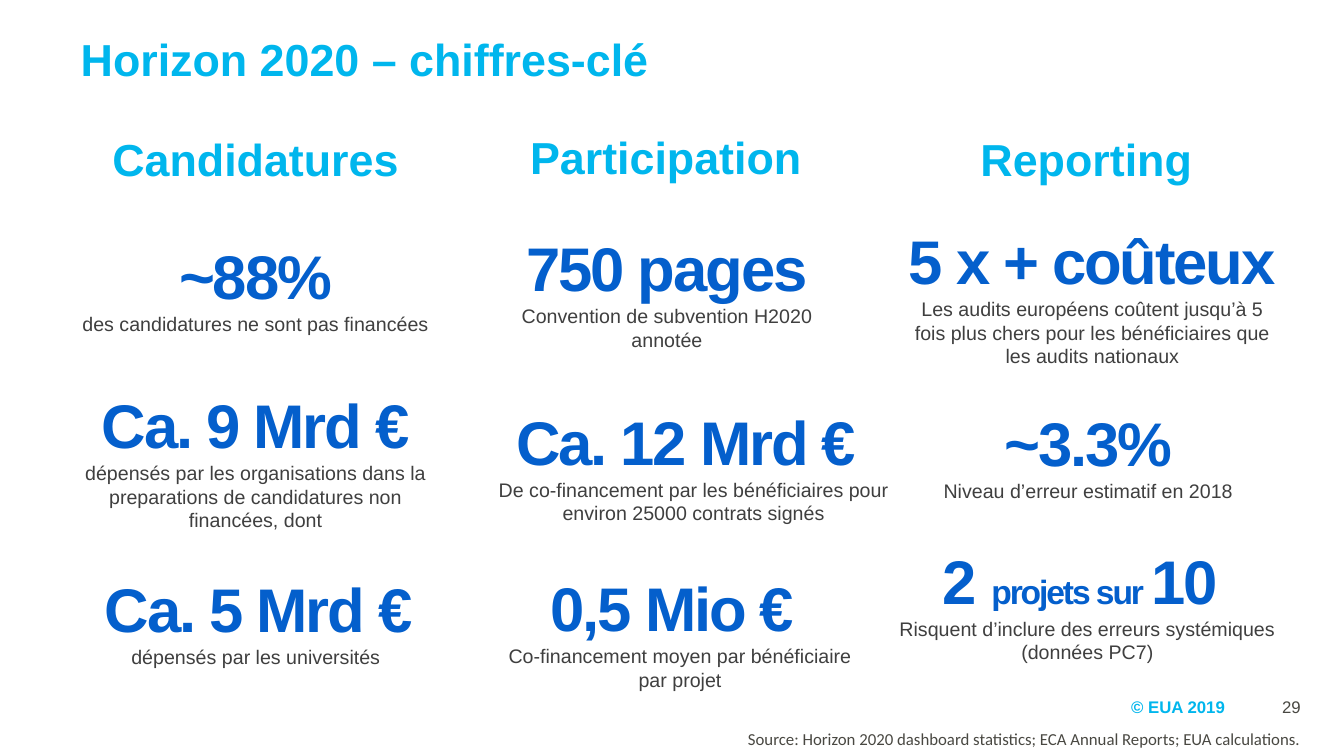
from pptx import Presentation
from pptx.dml.color import RGBColor
from pptx.enum import shapes, text
from pptx.util import Inches, Pt

CYAN = RGBColor(0x00, 0xB6, 0xED)
BLUE = RGBColor(0x04, 0x5F, 0xCC)
GREY = RGBColor(0x3F, 0x3F, 0x3F)
DARK = RGBColor(0x49, 0x48, 0x42)
WHITE = RGBColor(0xFF, 0xFF, 0xFF)

INSET = 0.04
BIG, SMALL = 44, 24

# Each heading and figure: left, top, width, height, then its wording.
# A figure's first item is a list of (text, size) spans.
HEADINGS = [
    (0.69, 1.18, 3.69, 0.78, "Candidatures"),
    (4.76, 1.16, 3.69, 0.78, "Participation"),
    (8.86, 1.18, 3.83, 0.78, "Reporting"),
]
FIGURES = [
    (0.69, 3.7, 3.69, 1.72, [("Ca. 9 Mrd €", BIG)],
     "dépensés par les organisations dans la preparations de candidatures non financées, dont"),
    (0.69, 1.98, 3.69, 1.72, [("~88%", BIG)], "des candidatures ne sont pas financées"),
    (0.72, 5.29, 3.69, 1.72, [("Ca. 5 Mrd €", BIG)], "dépensés par les universités "),
    (4.77, 2.03, 3.69, 1.71, [("750 pages", BIG)], "Convention de subvention H2020 annotée"),
    (4.84, 3.75, 4.08, 1.71, [("Ca. 12 Mrd € ", BIG)],
     "De co-financement par les bénéficiaires pour environ 25000 contrats signés"),
    (4.9, 5.4, 3.69, 1.71, [("0,5 Mio € ", BIG)], "Co-financement moyen par bénéficiaire par projet"),
    (8.92, 2.19, 3.83, 1.71, [("5 x + coûteux", BIG)],
     "Les audits européens coûtent jusqu’à 5 fois plus chers pour les bénéficiaires que les audits nationaux"),
    (8.88, 3.64, 3.83, 1.72, [("~3.3%", BIG)], "Niveau d’erreur estimatif en 2018"),
    (8.87, 5.16, 3.83, 1.65, [("2 ", BIG), ("projets sur ", SMALL), ("10 ", BIG)],
     "Risquent d’inclure des erreurs systémiques (données PC7)"),
]
RAISED_TOP = 2.19  # the figure whose text sits above the middle of its box
RAISED_INSET = 0.27


def add_span(para, wording, size, color, bold=False, font="Arial", spacing=None):
    span = para.add_run()
    span.text = wording
    span.font.name = font
    span.font.size = Pt(size)
    span.font.bold = bold
    span.font.color.rgb = color
    if spacing is not None:
        span.font._element.set("spc", str(int(spacing * 100)))


def add_title(page, wording):
    title = page.shapes.title
    title.left, title.top = Inches(0.7), Inches(0.32)
    title.width, title.height = Inches(8.93), Inches(0.78)
    title.text_frame.vertical_anchor = text.MSO_ANCHOR.TOP
    para = title.text_frame.paragraphs[0]
    para.alignment = text.PP_ALIGN.LEFT
    para.line_spacing = 0.9
    add_span(para, wording, 32, CYAN, bold=True)


def add_panel(page, left, top, width, height):
    """Add a white rectangle and return its text frame."""
    panel = page.shapes.add_shape(shapes.MSO_SHAPE.RECTANGLE, Inches(left), Inches(top),
                                  Inches(width), Inches(height))
    panel.shadow.inherit = False
    panel.fill.solid()
    panel.fill.fore_color.rgb = WHITE
    panel.line.fill.background()
    frame = panel.text_frame
    frame.word_wrap = True
    frame.vertical_anchor = text.MSO_ANCHOR.MIDDLE
    frame.margin_left = frame.margin_right = Inches(INSET)
    frame.margin_top = frame.margin_bottom = Inches(INSET)
    frame.paragraphs[0].alignment = text.PP_ALIGN.CENTER
    return frame


def add_heading(page, left, top, width, height, wording):
    frame = add_panel(page, left, top, width, height)
    add_span(frame.paragraphs[0], wording, 32, CYAN, bold=True)


def add_figure(page, left, top, width, height, figure, caption):
    frame = add_panel(page, left, top, width, height)
    if top == RAISED_TOP:
        frame.margin_bottom = Inches(RAISED_INSET)
    for wording, size in figure:
        add_span(frame.paragraphs[0], wording, size, BLUE, bold=True, spacing=-1.5)
    para = frame.add_paragraph()
    para.alignment = text.PP_ALIGN.CENTER
    add_span(para, caption, 14, GREY)


def add_note(page, left, top, width, height, wording, color, align=text.PP_ALIGN.LEFT,
             anchor=text.MSO_ANCHOR.MIDDLE, **style):
    box = page.shapes.add_textbox(Inches(left), Inches(top), Inches(width), Inches(height))
    frame = box.text_frame
    frame.word_wrap = True
    frame.vertical_anchor = anchor
    para = frame.paragraphs[0]
    para.alignment = align
    add_span(para, wording, 12, color, **style)


def main():
    deck = Presentation()
    deck.slide_width, deck.slide_height = Inches(13.33), Inches(7.5)
    page = deck.slides.add_slide(deck.slide_layouts.get_by_name("Title Only"))
    add_title(page, "Horizon 2020 – chiffres-clé")
    for heading in HEADINGS:
        add_heading(page, *heading)
    for figure in FIGURES:
        add_figure(page, *figure)
    add_note(page, 11.12, 6.81, 1.13, 0.4, "© EUA 2019", CYAN, bold=True)
    add_note(page, 12.4, 6.81, 0.6, 0.4, "29", DARK, align=text.PP_ALIGN.RIGHT)
    add_note(page, 7.32, 7.18, 5.9, 0.3,
             "Source: Horizon 2020 dashboard statistics; ECA Annual Reports; EUA calculations.",
             DARK, anchor=text.MSO_ANCHOR.TOP, font="Calibri")
    deck.save("out.pptx")


if __name__ == "__main__":
    main()
